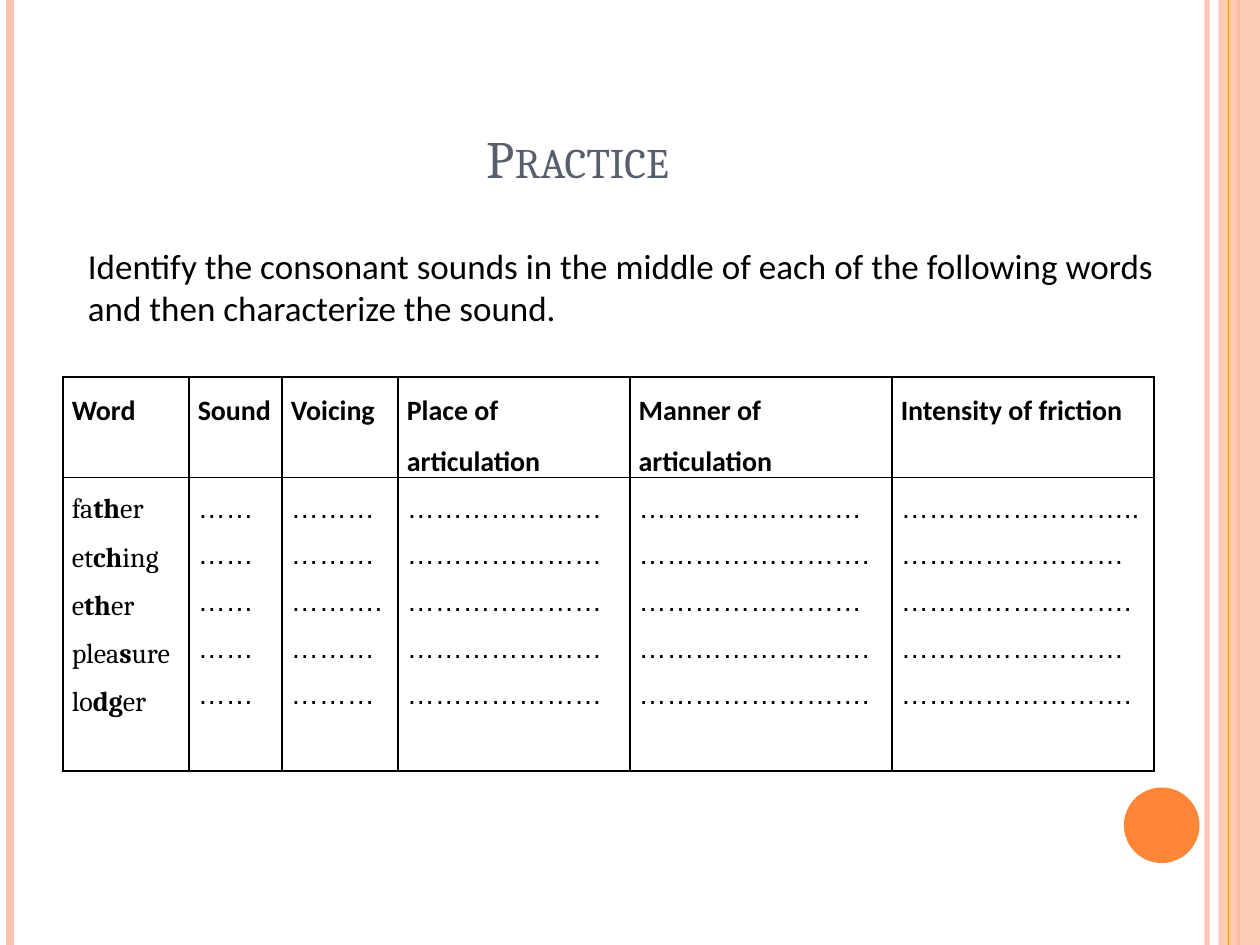
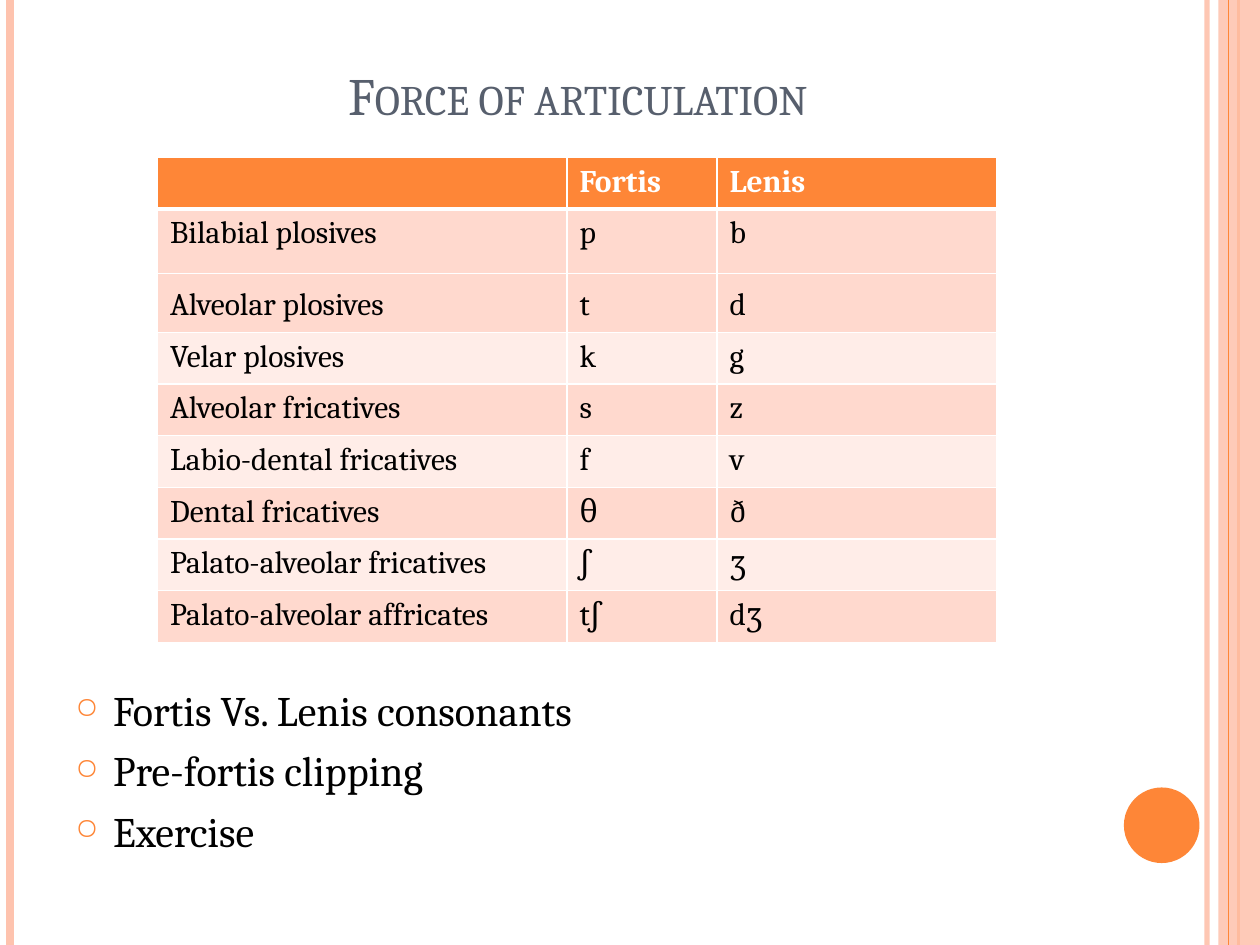
from lxml.etree import SubElement
from pptx import Presentation
from pptx.dml.color import RGBColor
from pptx.enum.shapes import MSO_CONNECTOR, MSO_SHAPE
from pptx.enum.text import MSO_ANCHOR, PP_ALIGN
from pptx.oxml import parse_xml
from pptx.oxml.ns import nsdecls, qn
from pptx.util import Inches, Pt

ORANGE = RGBColor(0xFE, 0x86, 0x37)
PEACH = RGBColor(0xFE, 0xC3, 0xAE)
SLATE = RGBColor(0x57, 0x5F, 0x6D)
BAND_DARK = RGBColor(0xFF, 0xD9, 0xCE)
BAND_LIGHT = RGBColor(0xFF, 0xED, 0xE8)
BLACK = RGBColor(0, 0, 0)
WHITE = RGBColor(0xFF, 0xFF, 0xFF)

WIDTH, HEIGHT = 10, 7.5
RULES = [(9.58, PEACH, 3, 93), (0.08, PEACH, 4.5, 100), (9.83, ORANGE, 1.5, 100)]
INNER_RULE = (9.75, ORANGE, 0.75, 100)

TASK = ["Identify the consonant sounds in the middle of each of the following words",
        "and then characterize the sound."]
PRACTICE_COLS = [("Word", 1), ("Sound", 0.74), ("Voicing", 0.92),
                 ("Place of articulation", 1.84), ("Manner of articulation", 2.08),
                 ("Intensity of friction", 2.08)]
PRACTICE_ROWS = [0.8, 2.33]
WORDS = [("fa", "th", "er"), ("et", "ch", "ing"), ("e", "th", "er"),
         ("plea", "s", "ure"), ("lo", "dg", "er")]
ANSWER_DOTS = [(2, ["", "", "", "", ""]), (3, ["", "", ".", "", ""]),
               (7, ["", "", "", "", ""]), (8, ["", ".", "", ".", "."]),
               (8, ["..", "", ".", "", "."])]

FORCE_COLS = [3.25, 1.19, 2.22]
FORCE_ROWS = [
    ([], ["Fortis"], ["Lenis"]),
    (["Bilabial plosives", "Alveolar plosives"], ["p", "t"], ["b", "d"]),
    (["Velar plosives"], ["k"], ["g"]),
    (["Alveolar fricatives"], ["s"], ["z"]),
    (["Labio-dental fricatives"], ["f"], ["v"]),
    (["Dental fricatives"], ["θ"], ["ð"]),
    (["Palato-alveolar fricatives"], ["ʃ"], ["ʒ"]),
    (["Palato-alveolar affricates"], ["tʃ"], ["dʒ"]),
]
TOPICS = ["Fortis Vs. Lenis consonants", "Pre-fortis clipping", "Exercise"]


def font(name, size, color=BLACK, bold=False):
    return {"name": name, "size": Pt(size), "color": color, "bold": bold}


def set_font(f, fmt):
    for key, value in fmt.items():
        if key == "color":
            f.color.rgb = value
        else:
            setattr(f, key, value)


def write(tf, paras, fmt, **spacing):
    """Fill a text frame; in a tuple of runs every second one is bold."""
    for i, para in enumerate(paras):
        p = tf.paragraphs[0] if i == 0 else tf.add_paragraph()
        for key, value in spacing.items():
            if i or key != "space_before":
                setattr(p, key, value)
        for j, text in enumerate((para,) if isinstance(para, str) else para):
            r = p.add_run()
            r.text = text
            set_font(r.font, fmt)
            if j % 2:
                r.font.bold = True


def set_alpha(element, percent):
    if percent < 100:
        SubElement(next(element.iter(qn("a:srgbClr"))), qn("a:alpha"), val=str(percent * 1000))


def add_line(s, x1, y1, x2, y2, color, width, alpha=100):
    line = s.shapes.add_connector(MSO_CONNECTOR.STRAIGHT, *map(Inches, (x1, y1, x2, y2)))
    line.line.color.rgb = color
    line.line.width = Pt(width)
    sp_pr = line._element.spPr
    set_alpha(sp_pr, alpha)
    SubElement(sp_pr, qn("a:effectLst"))


def add_rule(s, x, color, width, alpha):
    add_line(s, x, 0, x, HEIGHT, color, width, alpha)


def add_filled(s, kind, box, color, alpha=100):
    sp = s.shapes.add_shape(kind, *map(Inches, box))
    sp.shadow.inherit = False
    sp.fill.solid()
    sp.fill.fore_color.rgb = color
    sp.line.fill.background()
    set_alpha(sp._element.spPr, alpha)


def add_slide(prs, title, title_height):
    s = prs.slides.add_slide(prs.slide_layouts[5])
    for rule in RULES:
        add_rule(s, *rule)
    add_filled(s, MSO_SHAPE.RECTANGLE, (9.67, 0, 0.33, HEIGHT), PEACH, 87)
    add_rule(s, *INNER_RULE)
    add_filled(s, MSO_SHAPE.OVAL, (8.92, 6.25, 0.6, 0.6), ORANGE)
    sp = s.shapes.title
    sp.left, sp.top, sp.width, sp.height = map(Inches, (0.5, 0.3, 8.17, title_height))
    tf = sp.text_frame
    tf.vertical_anchor = MSO_ANCHOR.BOTTOM
    write(tf, [title], font("Cambria", 30, SLATE), alignment=PP_ALIGN.CENTER)
    tf.paragraphs[0].runs[0].font._element.set("cap", "small")
    return s


def add_text(s, box, paras, fmt, anchor, **spacing):
    tf = s.shapes.add_textbox(*map(Inches, box)).text_frame
    tf.word_wrap = True
    tf.vertical_anchor = anchor
    write(tf, paras, fmt, **spacing)
    return tf


def add_table(s, left, top, cols, rows):
    box = map(Inches, (left, top, sum(cols), sum(rows)))
    table = s.shapes.add_table(len(rows), len(cols), *box).table
    table.first_row = table.horz_banding = False
    for col, width in zip(table.columns, cols):
        col.width = Inches(width)
    for row, height in zip(table.rows, rows):
        row.height = Inches(height)
    return table


def set_borders(cell, color, bottom=1):
    tc_pr = cell._tc.get_or_add_tcPr()
    for i, side in enumerate("LRTB"):
        width = Pt(bottom if side == "B" else 1)
        tc_pr.insert(i, parse_xml(
            f'<a:ln{side} {nsdecls("a")} w="{width}"><a:solidFill>'
            f'<a:srgbClr val="{color}"/></a:solidFill></a:ln{side}>'))


def add_bullets(tf):
    for p in tf.paragraphs:
        p_pr = p._p.get_or_add_pPr()
        p_pr.set("marL", str(Inches(0.3)))
        p_pr.set("indent", str(Inches(-0.3)))
        SubElement(SubElement(p_pr, qn("a:buClr")), qn("a:srgbClr"), val=str(ORANGE))
        SubElement(p_pr, qn("a:buSzPct"), val="70000")
        SubElement(p_pr, qn("a:buChar"), char="○")


def build_practice(prs):
    s = add_slide(prs, "Practice", 1.25)
    add_text(s, (0.6, 1.89, 8.8, 0.77), TASK, font("Calibri", 20), MSO_ANCHOR.MIDDLE)
    heads, widths = zip(*PRACTICE_COLS)
    table = add_table(s, 0.5, 2.99, widths, PRACTICE_ROWS)
    answers = [["…" * count + end for end in ends] for count, ends in ANSWER_DOTS]
    for c, (head, body) in enumerate(zip(heads, [WORDS] + answers)):
        body_font = font("Arial" if c else "Cambria", 16)
        for r, (paras, fmt) in enumerate([([head], font("Calibri", 16, bold=True)),
                                          (body, body_font)]):
            cell = table.cell(r, c)
            cell.margin_left = cell.margin_right = Inches(0.07)
            cell.margin_top = cell.margin_bottom = 0
            cell.fill.background()
            set_borders(cell, BLACK)
            write(cell.text_frame, paras, fmt, line_spacing=1.5)


def build_force(prs):
    s = add_slide(prs, "Force of articulation", 0.75)
    tf = add_text(s, (0.5, 5.38, 8.42, 1.7), TOPICS, font("Cambria", 24), MSO_ANCHOR.TOP,
                  space_before=Pt(6))
    add_bullets(tf)
    heights = [0.97 if len(row[0]) > 1 else 0.41 for row in FORCE_ROWS]
    table = add_table(s, 1.25, 1.25, FORCE_COLS, heights)
    for r, row in enumerate(FORCE_ROWS):
        fill = BAND_DARK if r % 2 else BAND_LIGHT
        fmt = font("Cambria", 18)
        if r == 0:
            fill, fmt = ORANGE, font("Cambria", 18, WHITE, True)
        for c, paras in enumerate(row):
            cell = table.cell(r, c)
            cell.fill.solid()
            cell.fill.fore_color.rgb = fill
            set_borders(cell, WHITE, 1 if r else 3)
            write(cell.text_frame, paras, fmt, space_before=Pt(20))
    add_line(s, 1.25, 2.17, 7.92, 2.17, WHITE, 1)


def main():
    prs = Presentation()
    prs.slide_width, prs.slide_height = Inches(WIDTH), Inches(HEIGHT)
    build_practice(prs)
    build_force(prs)
    prs.save("out.pptx")


if __name__ == "__main__":
    main()
